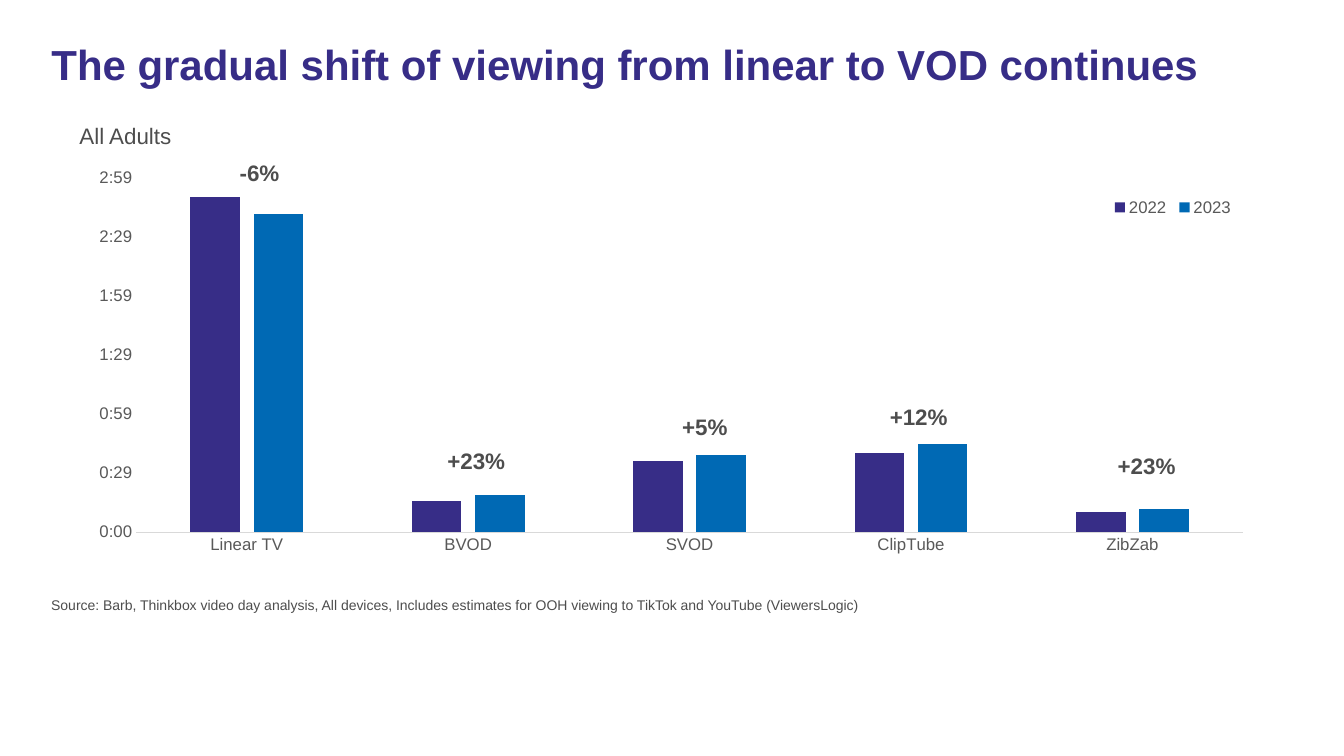
from pptx import Presentation
from pptx.chart.data import CategoryChartData as Data
from pptx.dml.color import RGBColor
from pptx.enum.chart import XL_CHART_TYPE as Kind, XL_LEGEND_POSITION as Spot, XL_TICK_MARK as Tick
from pptx.enum.text import MSO_ANCHOR as Anchor, MSO_AUTO_SIZE as Auto, PP_ALIGN as Align
from pptx.oxml import parse_xml
from pptx.oxml.ns import nsdecls, qn
from pptx.util import Pt

INDIGO = RGBColor(0x37, 0x2D, 0x87)
BLUE = RGBColor(0x00, 0x69, 0xB4)
GREY = RGBColor(0x4D, 0x4D, 0x4D)
AXIS = RGBColor(0x59, 0x59, 0x59)
RULE = RGBColor(0xD9, 0xD9, 0xD9)
FACE = "Arial"
HALF = 0.020833
GROUPS = ["Linear TV", "BVOD", "SVOD", "ClipTube", "ZibZab"]
YEARS = [
    ("2022", (0.118, 0.011, 0.025, 0.028, 0.007), INDIGO),
    ("2023", (0.112, 0.013, 0.027, 0.031, 0.008), BLUE),
]
SHIFTS = [
    ("-6%", 109.4, -3.6, 45.4),
    ("+23%", 257.8, 202.3, 64),
    ("+5%", 425.5, 177.8, 64),
    ("+12%", 573.8, 170.6, 64),
    ("+23%", 736.6, 205.9, 64),
]


def style(font, size, color, bold=False):
    font.name = FACE
    font.size = Pt(size)
    font.bold = bold
    font.color.rgb = color


def add_text(slide, box, text, size, bold=False):
    shape = slide.shapes.add_textbox(*map(Pt, box))
    frame = shape.text_frame
    frame.word_wrap = True
    run = frame.paragraphs[0].add_run()
    run.text = text
    style(run.font, size, GREY, bold)


def add_title(slide, box, text):
    title = slide.shapes.title
    title.left, title.top, title.width, title.height = map(Pt, box)
    frame = title.text_frame
    frame.word_wrap = True
    frame.auto_size = Auto.NONE
    frame.vertical_anchor = Anchor.TOP
    para = frame.paragraphs[0]
    para.alignment = Align.LEFT
    para.line_spacing = 0.9
    run = para.add_run()
    run.text = text
    style(run.font, 30, INDIGO, True)


def layout(box, inner=False):
    target = '<c:layoutTarget val="inner"/>' if inner else ""
    modes = "".join(f'<c:{key}Mode val="edge"/>' for key in "xy")
    sizes = "".join(f'<c:{key} val="{val}"/>' for key, val in zip("xywh", box))
    return parse_xml(
        f'<c:layout {nsdecls("c")}><c:manualLayout>{target}{modes}{sizes}'
        "</c:manualLayout></c:layout>"
    )


def place(chart):
    plot = chart.element.find(".//" + qn("c:plotArea"))
    for old in plot.findall(qn("c:layout")):
        plot.remove(old)
    plot.insert(0, layout((0.05, 0.042, 0.93, 0.812), True))
    legend = chart.element.find(".//" + qn("c:legend"))
    for old in legend.findall(qn("c:layout")):
        legend.remove(old)
    legend.find(qn("c:legendPos")).addnext(layout((0.866, 0.08, 0.11, 0.06)))


def add_bars(slide, box):
    data = Data(number_format="h:mm")
    data.categories = GROUPS
    for name, vals, _ in YEARS:
        data.add_series(name, vals)
    frame = slide.shapes.add_chart(Kind.COLUMN_CLUSTERED, *map(Pt, box), data)
    chart = frame.chart
    chart.has_title = False
    style(chart.font, 10, AXIS)
    plot = chart.plots[0]
    plot.gap_width = 219
    plot.overlap = -27
    plot.vary_by_categories = False
    for bars, (_, _, color) in zip(plot.series, YEARS):
        bars.format.fill.solid()
        bars.format.fill.fore_color.rgb = color
    for axis in (chart.category_axis, chart.value_axis):
        axis.major_tick_mark = axis.minor_tick_mark = Tick.NONE
        axis.has_major_gridlines = False
        style(axis.tick_labels.font, 12, AXIS)
    line = chart.category_axis.format.line
    line.color.rgb = RULE
    line.width = Pt(0.75)
    axis = chart.value_axis
    axis.minimum_scale = 0
    axis.maximum_scale = 0.125
    axis.major_unit = HALF
    axis.format.line.fill.background()
    axis.tick_labels.number_format = "h:mm"
    axis.tick_labels.number_format_is_linked = False
    chart.has_legend = True
    chart.legend.position = Spot.BOTTOM
    chart.legend.include_in_layout = False
    style(chart.legend.font, 12, AXIS)
    place(chart)


def add_panel(slide, box):
    left, top, width, height = box
    add_bars(slide, box)
    for text, x, y, span in SHIFTS:
        add_text(slide, (left + x, top + y, span, 26.6), text, 16, True)
    add_text(slide, (left - 5, top - 30.3, 167, 26.6), "All Adults", 16)


def main():
    deck = Presentation()
    deck.slide_width = Pt(960)
    deck.slide_height = Pt(540)
    slide = deck.slides.add_slide(deck.slide_layouts[5])
    add_title(slide, (29.5, 28.1, 892.8, 80.6),
              "The gradual shift of viewing from linear to VOD continues")
    add_panel(slide, (54.7, 113.8, 850.3, 311.8))
    add_text(slide, (29.5, 422.6, 892.8, 23.8),
             "Source: Barb, Thinkbox video day analysis, All devices, Includes "
             "estimates for OOH viewing to TikTok and YouTube (ViewersLogic)", 10)
    deck.save("out.pptx")


if __name__ == "__main__":
    main()
